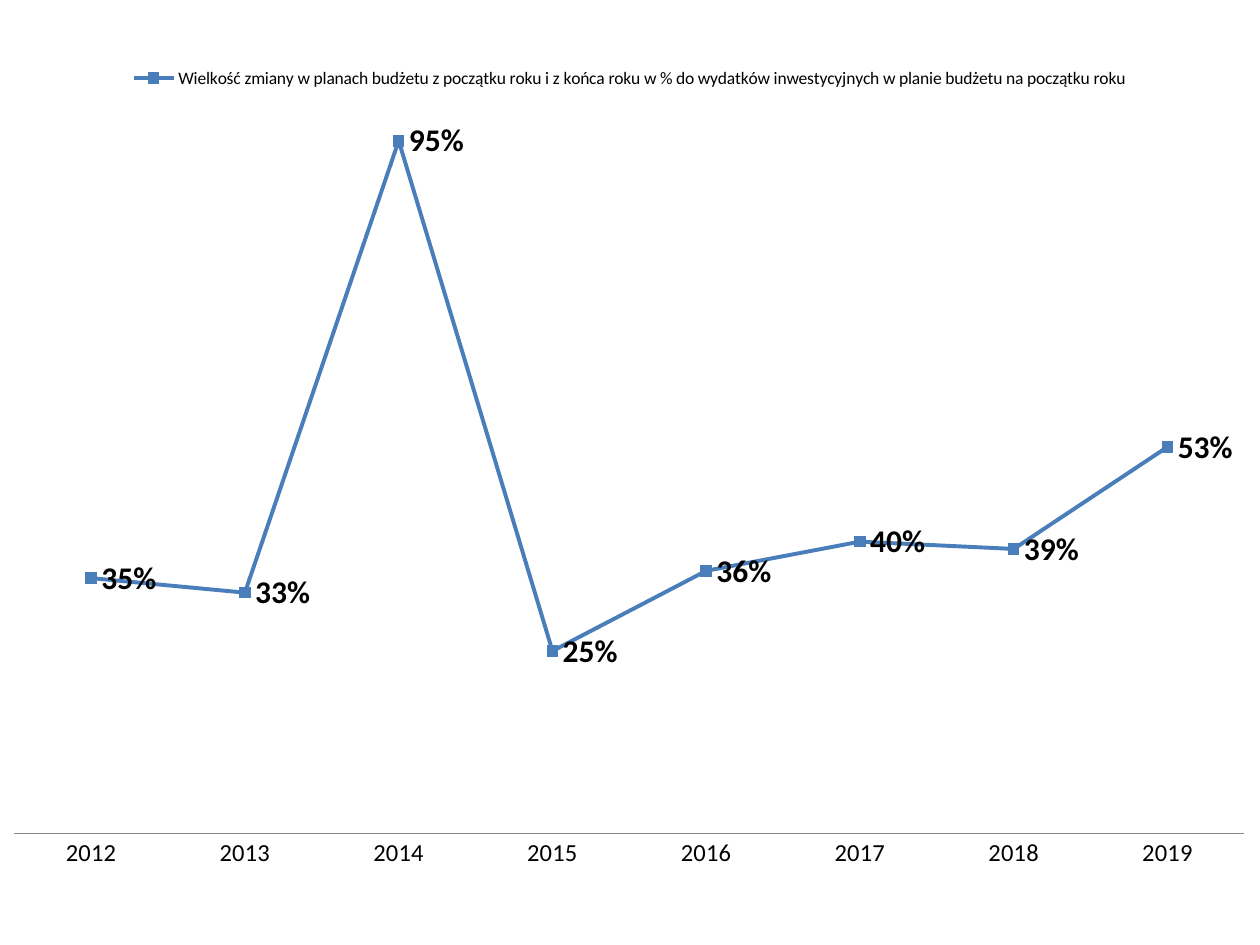
import pptx
import pptx.chart.data
import pptx.dml.color
import pptx.enum.chart
import pptx.oxml
import pptx.oxml.ns
import pptx.util
from pptx.util import Inches

YEARS = [str(year) for year in range(2012, 2020)]
CHANGES = [0.35, 0.33, 0.95, 0.25, 0.36, 0.40, 0.39, 0.53]
SERIES_NAME = (
    "Wielkość zmiany w planach budżetu z początku roku i z końca roku w % "
    "do wydatków inwestycyjnych w planie budżetu na początku roku"
)


def rgb(color):
    return pptx.dml.color.RGBColor.from_string(color)


def set_font(font, size, bold=False):
    font.name = "Calibri"
    font.size = pptx.util.Pt(size)
    font.bold = bold
    font.color.rgb = rgb("000000")


def add_budget_chart(slide):
    budget = pptx.chart.data.CategoryChartData(number_format="0%")
    budget.categories = YEARS
    budget.add_series(SERIES_NAME, CHANGES)
    chart = slide.shapes.add_chart(
        pptx.enum.chart.XL_CHART_TYPE.LINE_MARKERS,
        Inches(-0.09), Inches(0.43), Inches(10.17), Inches(6.65), budget,
    ).chart
    set_font(chart.font, 10)
    chart.has_title = False
    chart.has_legend = True
    chart.legend.position = pptx.enum.chart.XL_LEGEND_POSITION.TOP
    chart.legend.include_in_layout = False
    set_font(chart.legend.font, 10)
    return chart


def style_axes(chart):
    years = chart.category_axis
    years.major_tick_mark = pptx.enum.chart.XL_TICK_MARK.NONE
    years.format.line.color.rgb = rgb("878787")
    years.format.line.width = pptx.util.Pt(0.75)
    set_font(years.tick_labels.font, 14)
    percent = chart.value_axis
    percent.minimum_scale = 0
    percent.maximum_scale = 1
    percent.has_major_gridlines = False
    percent.visible = False


def style_line(chart):
    plot = chart.plots[0]
    plot.vary_by_categories = False
    change = plot.series[0]
    change.smooth = False
    change.format.line.color.rgb = rgb("4A7EBB")
    change.format.line.width = pptx.util.Pt(2.25)
    marker = change.marker
    marker.style = pptx.enum.chart.XL_MARKER_STYLE.SQUARE
    marker.size = 6
    marker.format.fill.solid()
    marker.format.fill.fore_color.rgb = rgb("4F81BD")
    marker.format.line.color.rgb = rgb("4A7EBB")
    labels = change.data_labels
    labels.show_value = True
    labels.number_format = "0%"
    labels.number_format_is_linked = False
    labels.position = pptx.enum.chart.XL_LABEL_POSITION.RIGHT
    set_font(labels.font, 18, bold=True)


def place_plot(chart, **fractions):
    plot_area = chart.plots[0]._element.getparent()
    for old_layout in plot_area.findall(pptx.oxml.ns.qn("c:layout")):
        plot_area.remove(old_layout)
    sizes = "".join(f'<c:{key} val="{value}"/>' for key, value in fractions.items())
    plot_area.insert(0, pptx.oxml.parse_xml(
        f'<c:layout {pptx.oxml.ns.nsdecls("c")}><c:manualLayout>'
        '<c:layoutTarget val="inner"/><c:xMode val="edge"/><c:yMode val="edge"/>'
        f"{sizes}</c:manualLayout></c:layout>"
    ))


def main():
    deck = pptx.Presentation()
    deck.slide_width = Inches(10)
    deck.slide_height = Inches(7.5)
    slide = deck.slides.add_slide(deck.slide_layouts[6])
    chart = add_budget_chart(slide)
    style_axes(chart)
    style_line(chart)
    place_plot(chart, x=0.02, y=0.06, w=0.96, h=0.87)
    deck.save("out.pptx")


if __name__ == "__main__":
    main()
